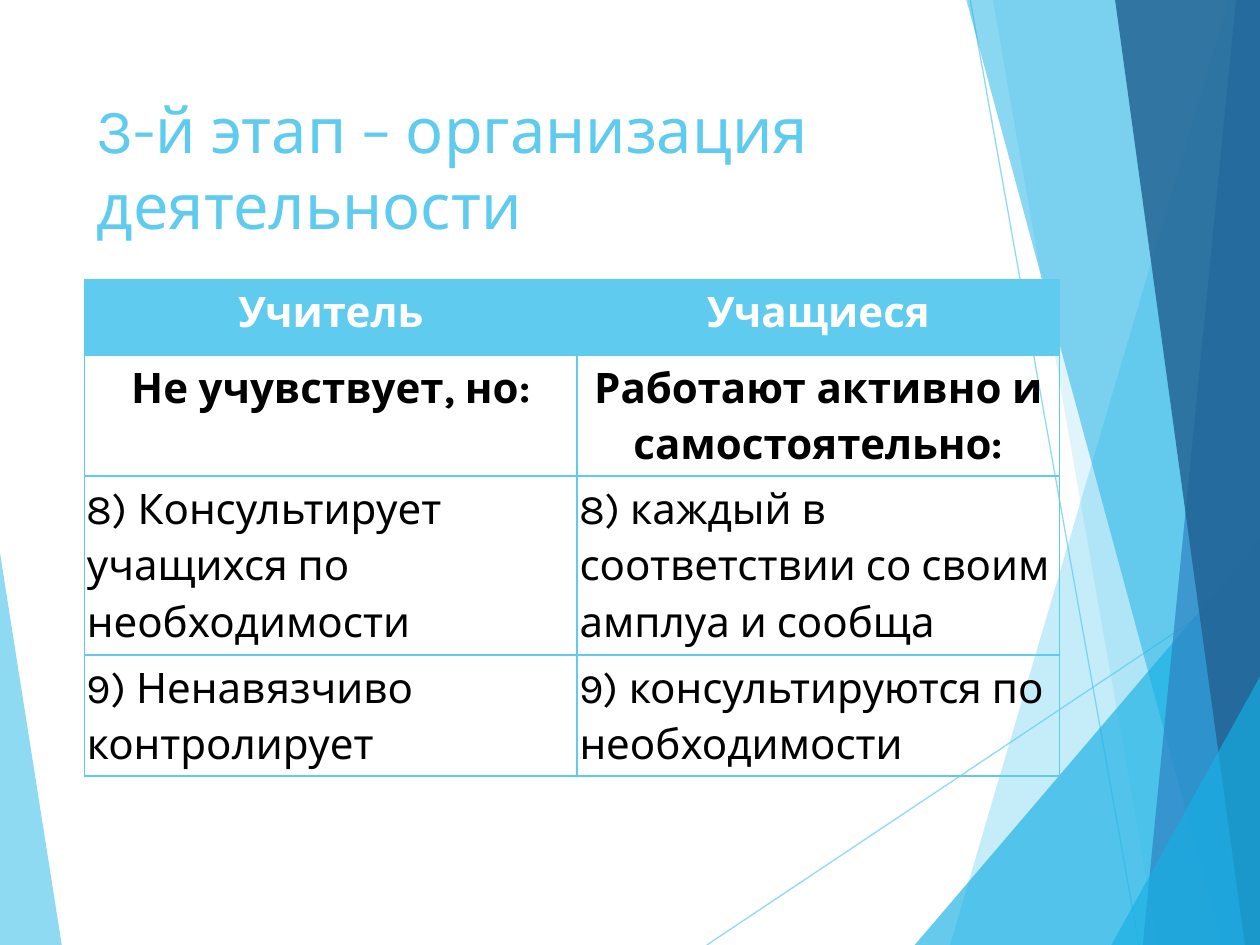
from collections import namedtuple

from pptx import Presentation
from pptx.dml.color import RGBColor
from pptx.enum.shapes import MSO_CONNECTOR as Connector
from pptx.enum.text import MSO_ANCHOR as Anchor, PP_ALIGN as Align
from pptx.oxml.ns import qn
from pptx.util import Inches, Pt
from lxml.etree import SubElement

Box = namedtuple("Box", "left top width height")

FONT = "Karla"
SKY = RGBColor(0x5F, 0xCB, 0xEF)
CYAN = RGBColor(0x17, 0xB0, 0xE4)
BLUE = RGBColor(0x2E, 0x83, 0xC3)
NAVY = RGBColor(0x22, 0x62, 0x92)
WHITE = RGBColor(0xFF, 0xFF, 0xFF)
BLACK = RGBColor(0, 0, 0)

RAYS = [((5.61, 7.5), (10, 4.57)), ((7.7, 0), (9.04, 7.5))]
FACETS = [
    (SKY, 70, [(0, 4.39), (0.49, 7.5), (0, 7.5)]),
    (SKY, 36, [(9.75, 0), (7.54, 7.5), (10, 7.5), (10, 0)]),
    (SKY, 20, [(7.88, 0), (9.19, 7.5), (10, 7.5), (10, 0)]),
    (CYAN, 66, [(7.26, 7.5), (10, 4.29), (10, 7.5)]),
    (CYAN, 50, [(7.67, 0), (9.7, 7.5), (10, 7.5), (10, 0)]),
    (BLUE, 70, [(9.81, 0), (9.07, 7.5), (10, 7.5), (10, 0)]),
    (NAVY, 82, [(8.85, 0), (9.88, 7.5), (10, 7.5), (10, 0)]),
    (CYAN, 66, [(8.82, 7.5), (10, 5.37), (10, 7.5)]),
]

COLUMN_WIDTHS = [3.91, 3.83]
ROW_HEIGHTS = [0.6, 0.48, 0.78, 0.78]
STAGES = [
    ("Учитель", "Учащиеся"),
    ("Не учувствует, но:", "Работают активно и самостоятельно:"),
    ("8) Консультирует учащихся по необходимости",
     "8) каждый в соответствии со своим амплуа и сообща"),
    ("9) Ненавязчиво контролирует", "9) консультируются по необходимости"),
]


def write(frame, text, size, color, bold=False, align=Align.LEFT, spacing=None):
    frame.word_wrap = True
    paragraph = frame.paragraphs[0]
    paragraph.alignment = align
    paragraph.line_spacing = spacing
    run = paragraph.add_run()
    run.text = text
    run.font.name = FONT
    run.font.size = Pt(size)
    run.font.bold = bold
    run.font.color.rgb = color


def set_opacity(shape, percent):
    for color in shape._element.spPr.iter(qn("a:srgbClr")):
        SubElement(color, qn("a:alpha"), val=str(percent * 1000))


def add_facet(slide, box, color, opacity, corners):
    points = [(Inches(box.left + x), Inches(box.top + y)) for x, y in corners]
    builder = slide.shapes.build_freeform(*points[0])
    builder.add_line_segments(points[1:], close=True)
    facet = builder.convert_to_shape()
    facet.shadow.inherit = False
    facet.fill.solid()
    facet.fill.fore_color.rgb = color
    facet.line.fill.background()
    set_opacity(facet, opacity)


def add_ray(slide, box, start, end):
    ends = [Inches(offset + value) for point in (start, end)
            for offset, value in zip((box.left, box.top), point)]
    ray = slide.shapes.add_connector(Connector.STRAIGHT, *ends)
    ray.line.color.rgb = SKY
    ray.line.width = Pt(0.75)
    set_opacity(ray, 70)
    SubElement(ray._element.spPr, qn("a:effectLst"))


def add_backdrop(slide, box):
    add_facet(slide, box, *FACETS[0])
    for start, end in RAYS:
        add_ray(slide, box, start, end)
    for facet in FACETS[1:]:
        add_facet(slide, box, *facet)


def add_title(slide, box, text):
    title = slide.shapes.add_textbox(*map(Inches, box))
    title.text_frame.vertical_anchor = Anchor.TOP
    write(title.text_frame, text, 36, SKY)


def set_borders(cell, color, width):
    properties = cell._tc.get_or_add_tcPr()
    for index, side in enumerate(("lnL", "lnR", "lnT", "lnB")):
        border = properties.makeelement(qn(f"a:{side}"), {"w": str(Pt(width))})
        fill = SubElement(border, qn("a:solidFill"))
        SubElement(fill, qn("a:srgbClr"), val=str(color))
        properties.insert(index, border)


def fill_cell(cell, text, row):
    cell.margin_left = cell.margin_right = Inches(0.02)
    cell.margin_top = cell.margin_bottom = Inches(0.02)
    if row == 0:
        cell.fill.solid()
        cell.fill.fore_color.rgb = SKY
    else:
        cell.fill.background()
    set_borders(cell, SKY, 1)
    heading = row < 2
    write(cell.text_frame, text, 24, WHITE if row == 0 else BLACK, bold=heading,
          align=Align.CENTER if heading else Align.LEFT, spacing=1.15)


def add_stages(slide, box):
    table = slide.shapes.add_table(
        len(STAGES), len(COLUMN_WIDTHS), *map(Inches, box)).table
    for column, width in zip(table.columns, COLUMN_WIDTHS):
        column.width = Inches(width)
    for row, (texts, height) in enumerate(zip(STAGES, ROW_HEIGHTS)):
        table.rows[row].height = Inches(height)
        for column, text in enumerate(texts):
            fill_cell(table.cell(row, column), text, row)


def main():
    deck = Presentation()
    deck.slide_width, deck.slide_height = Inches(10), Inches(7.5)
    slide = deck.slides.add_slide(deck.slide_layouts[6])
    add_backdrop(slide, Box(0, 0, 10, 7.5))
    add_title(slide, Box(0.67, 0.67, 6.94, 1.44), "3-й этап – организация деятельности")
    add_stages(slide, Box(0.67, 2.22, sum(COLUMN_WIDTHS), sum(ROW_HEIGHTS)))
    deck.save("out.pptx")


if __name__ == "__main__":
    main()
